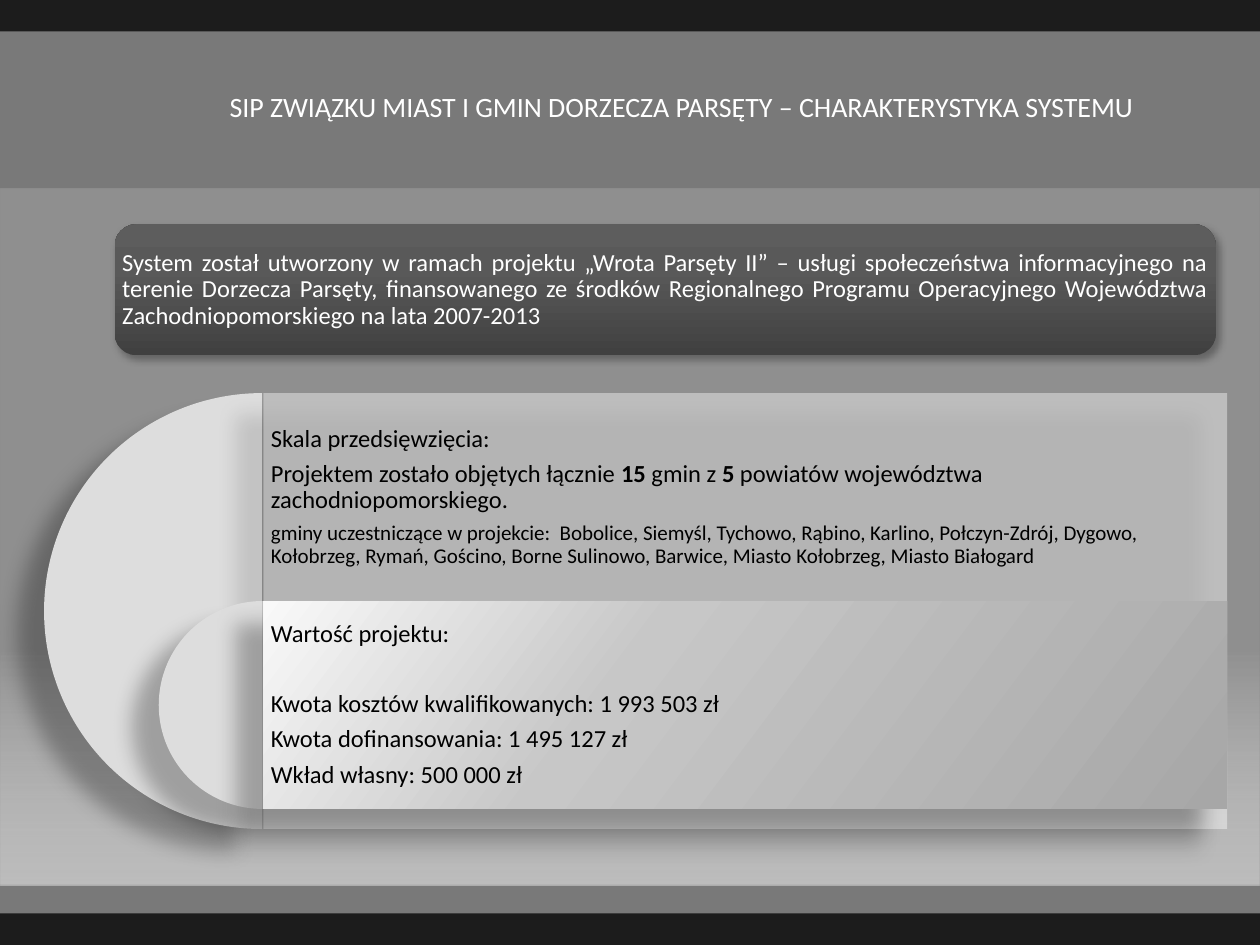
from lxml import etree
from pptx import Presentation
from pptx.dml.color import RGBColor
from pptx.enum.shapes import MSO_SHAPE
from pptx.enum.text import MSO_ANCHOR, PP_ALIGN
from pptx.oxml import parse_xml
from pptx.oxml.ns import nsdecls, qn
from pptx.util import Inches, Pt

RECTANGLE, ROUNDED, PIE = MSO_SHAPE.RECTANGLE, MSO_SHAPE.ROUNDED_RECTANGLE, MSO_SHAPE.PIE
MIDDLE, BOTTOM = MSO_ANCHOR.MIDDLE, MSO_ANCHOR.BOTTOM
LEFT, CENTER, JUSTIFY = PP_ALIGN.LEFT, PP_ALIGN.CENTER, PP_ALIGN.JUSTIFY

BLACK = RGBColor(0x00, 0x00, 0x00)
WHITE = RGBColor(0xFF, 0xFF, 0xFF)
FRAME = RGBColor(0x1C, 0x1C, 0x1C)
BAND = RGBColor(0x84, 0x84, 0x84)
DISC = RGBColor(0xDD, 0xDD, 0xDD)
BACKDROP_STOPS = [(66, RGBColor(0x96, 0x96, 0x96), 79), (100, WHITE, 50)]
INTRO_STOPS = [(0, RGBColor(0x40, 0x40, 0x40), 100), (65, RGBColor(0x59, 0x59, 0x59), 100),
               (100, RGBColor(0x5D, 0x5D, 0x5D), 100)]
VALUE_STOPS = [(0, RGBColor(0xA7, 0xA7, 0xA7), 100), (63, RGBColor(0xC7, 0xC7, 0xC7), 100),
               (100, RGBColor(0xF9, 0xF9, 0xF9), 100)]

FONT = "Calibri"
INTRO_SHADOW = (30, 4.5, 2.6, 53)
DEEP_SHADOW = (28, 11.8, 19.7, 141)
TITLE_SHADOW = (50, 4, 3, 45)
PANEL_LEFT, PANEL_WIDTH, PANEL_RIGHT_TOP = 2.09, 7.65, 3.12
SECTION_HEIGHT = 1.65

TITLE = "SIP ZWIĄZKU MIAST I GMIN DORZECZA PARSĘTY – CHARAKTERYSTYKA SYSTEMU"
INTRO = ("System został utworzony w ramach projektu „Wrota Parsęty II” – usługi społeczeństwa "
         "informacyjnego na terenie Dorzecza Parsęty, finansowanego ze środków Regionalnego "
         "Programu Operacyjnego Województwa Zachodniopomorskiego na lata 2007-2013")
SCALE = [
    (["Skala przedsięwzięcia:"], 14, 0),
    (["Projektem zostało objętych łącznie ", "15", " gmin z ", "5",
      " powiatów województwa zachodniopomorskiego."], 14, 0),
    (["gminy uczestniczące w projekcie:  Bobolice, Siemyśl, Tychowo, Rąbino, Karlino, "
      "Połczyn-Zdrój, Dygowo, Kołobrzeg, Rymań, Gościno, Borne Sulinowo, Barwice, "
      "Miasto Kołobrzeg, Miasto Białogard"], 12, 0),
]
VALUE = [
    (["Wartość projektu:"], 14, 0),
    (["Kwota kosztów kwalifikowanych: 1 993 503 zł"], 14, 20),
    (["Kwota dofinansowania: 1 495 127 zł"], 14, 0),
    (["Wkład własny: 500 000 zł"], 14, 0),
]


def color_xml(color, opacity):
    """Return a colour element with the given opacity in percent."""
    return f'<a:srgbClr val="{color}"><a:alpha val="{opacity * 1000}"/></a:srgbClr>'


def add_shadow(effects, shadow):
    """Append an outer shadow to an effect list."""
    opacity, blur, distance, angle = shadow
    effects.append(parse_xml(
        f'<a:outerShdw {nsdecls("a")} blurRad="{Pt(blur)}" dist="{Pt(distance)}" '
        f'dir="{angle * 60000}" algn="tl" rotWithShape="0">{color_xml(BLACK, opacity)}</a:outerShdw>'))


def add_block(slide, kind, box, color=None, opacity=100, stops=None, angle=0, shadow=None):
    """Add a borderless shape with a solid or gradient fill."""
    block = slide.shapes.add_shape(kind, *map(Inches, box))
    block.line.fill.background()
    block.shadow.inherit = False
    block.fill.solid()
    properties = block.element.spPr
    solid = properties.find(qn("a:solidFill"))
    if stops:
        marks = "".join(f'<a:gs pos="{position * 1000}">{color_xml(tone, alpha)}</a:gs>'
                        for position, tone, alpha in stops)
        properties.replace(solid, parse_xml(
            f'<a:gradFill {nsdecls("a")} rotWithShape="1"><a:gsLst>{marks}</a:gsLst>'
            f'<a:lin ang="{angle * 60000}" scaled="0"/></a:gradFill>'))
    else:
        properties.replace(solid, parse_xml(
            f'<a:solidFill {nsdecls("a")}>{color_xml(color, opacity)}</a:solidFill>'))
    if shadow:
        add_shadow(properties.find(qn("a:effectLst")), shadow)
    return block


def add_half_disc(slide, left, top, diameter):
    """Add the left half of a disc."""
    disc = add_block(slide, PIE, (left, top, diameter, diameter), DISC, shadow=DEEP_SHADOW)
    disc.adjustments[0], disc.adjustments[1] = 54, 162


def set_font(paragraph, size, color):
    """Set the common font of a paragraph."""
    paragraph.font.name = FONT
    paragraph.font.size = Pt(size)
    paragraph.font.color.rgb = color


def add_text(slide, box, paragraphs, color=BLACK, align=LEFT):
    """Add a text box whose every second run is bold."""
    frame = slide.shapes.add_textbox(*map(Inches, box)).text_frame
    frame.word_wrap = True
    frame.vertical_anchor = MIDDLE
    frame.margin_left = frame.margin_right = Inches(0.06)
    frame.margin_top = frame.margin_bottom = Inches(0.06)
    for index, (pieces, size, gap) in enumerate(paragraphs):
        paragraph = frame.add_paragraph() if index else frame.paragraphs[0]
        paragraph.alignment = align
        paragraph.line_spacing = 0.9
        paragraph.space_before = Pt(gap)
        paragraph.space_after = Pt(0.35 * size)
        set_font(paragraph, size, color)
        for number, piece in enumerate(pieces):
            run = paragraph.add_run()
            run.text = piece
            if number % 2:
                run.font.bold = True


def place_title(slide):
    """Fill the title placeholder and bring it above the backdrop."""
    title = slide.shapes.title
    title.left, title.top, title.width, title.height = map(Inches, (0.91, 0.13, 9, 0.9))
    frame = title.text_frame
    frame.text = TITLE
    frame.vertical_anchor = BOTTOM
    paragraph = frame.paragraphs[0]
    paragraph.alignment = CENTER
    set_font(paragraph, 16, WHITE)
    run_properties = paragraph.runs[0].font._element
    add_shadow(etree.SubElement(run_properties, qn("a:effectLst")), TITLE_SHADOW)
    slide.shapes.element.append(title.element)


def main():
    """Build the slide and save it."""
    deck = Presentation()
    deck.slide_width, deck.slide_height = Inches(10), Inches(7.5)
    slide = deck.slides.add_slide(deck.slide_layouts[5])

    add_block(slide, RECTANGLE, (0, 0, 10, 7.5), FRAME)
    add_block(slide, RECTANGLE, (0, 0.25, 10, 7), BAND, 90)
    add_block(slide, RECTANGLE, (0, 1.5, 10, 5.53), stops=BACKDROP_STOPS, angle=90)
    place_title(slide)

    intro_box = (0.91, 1.78, 8.74, 1.04)
    add_block(slide, ROUNDED, intro_box, stops=INTRO_STOPS, angle=270, shadow=INTRO_SHADOW)
    add_text(slide, intro_box, [([INTRO], 14, 0)], WHITE, JUSTIFY)

    scale_top = PANEL_RIGHT_TOP
    value_top = scale_top + SECTION_HEIGHT
    add_half_disc(slide, 0.35, scale_top, 3.46)
    add_block(slide, RECTANGLE, (PANEL_LEFT, scale_top, PANEL_WIDTH, 3.46), WHITE, 42,
              shadow=DEEP_SHADOW)
    add_text(slide, (PANEL_LEFT, scale_top, PANEL_WIDTH, SECTION_HEIGHT), SCALE)

    value_box = (PANEL_LEFT, value_top, PANEL_WIDTH, SECTION_HEIGHT)
    add_half_disc(slide, 1.26, value_top, SECTION_HEIGHT)
    add_block(slide, RECTANGLE, value_box, stops=VALUE_STOPS, angle=217, shadow=DEEP_SHADOW)
    add_text(slide, value_box, VALUE)

    deck.save("out.pptx")


if __name__ == "__main__":
    main()
